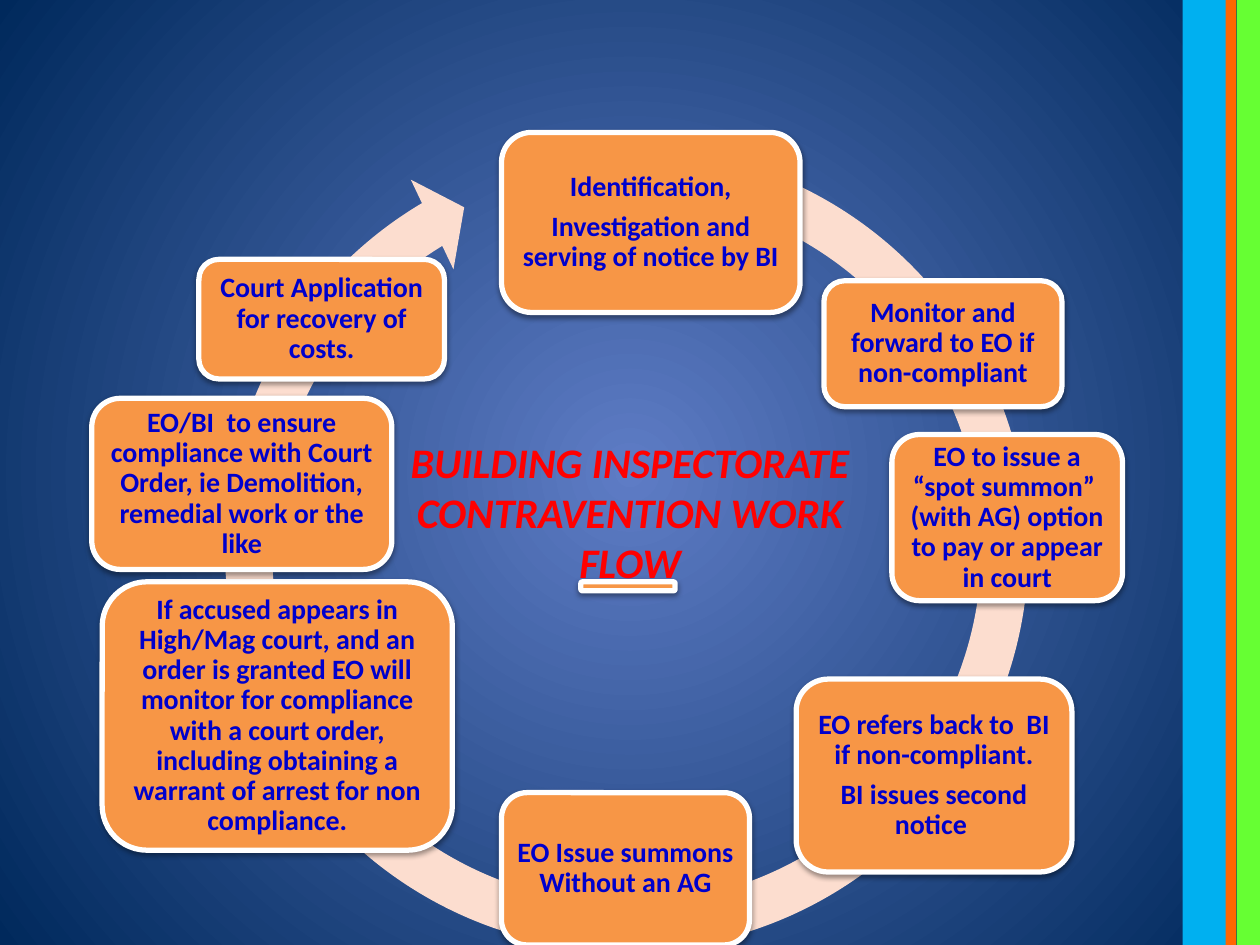
from dataclasses import dataclass

from lxml import etree
from pptx import Presentation
from pptx import util as u
from pptx.dml.color import RGBColor
from pptx.enum import shapes, text
from pptx.oxml import ns


@dataclass(frozen=True)
class Theme:
    glow: str = "5E7CC5"
    night: str = "00295C"
    sky: str = "00B0F0"
    flame: str = "FF6600"
    lime: str = "66FF33"
    ring: str = "FCDDCF"
    step: str = "F79646"
    border: str = "FFFFFF"
    step_text: str = "0000CC"
    title: str = "FF0000"
    font: str = "Calibri"
    step_size: int = 16
    title_size: int = 24


@dataclass(frozen=True)
class Area:
    """Position and size in centimetres."""
    left: float
    top: float
    width: float
    height: float

    def lengths(self) -> list:
        return [u.Cm(v) for v in (self.left, self.top, self.width, self.height)]


@dataclass(frozen=True)
class Step:
    area: Area
    lines: tuple = ()


THEME = Theme()
SLIDE_W, SLIDE_H = 25.4, 19.05

STRIPES = (
    (THEME.sky, Area(23.84, 0, 0.89, SLIDE_H)),
    (THEME.lime, Area(24.93, 0, 0.47, SLIDE_H)),
    (THEME.flame, Area(24.71, 0, 0.21, SLIDE_H)),
)
RING = Area(4.01, 2.44, 17.25, 17.25)
RING_ADJUSTMENTS = (0.055, 3.307, 143.426, 170.499, 0.058)
TITLE = Area(7.9, 8.92, 9.6, 2.79)
STEPS = (
    Step(Area(10.11, 2.67, 6.02, 3.63),
         ("Identification,", "Investigation and serving of notice by BI")),
    Step(Area(16.61, 5.66, 4.8, 2.54),
         ("Monitor and forward to EO if non-compliant",)),
    Step(Area(2.06, 11.73, 7.06, 5.41),
         ("If accused appears in High/Mag court, and an order is granted EO "
          "will monitor for compliance with a court order, including "
          "obtaining a warrant of arrest for non compliance.",)),
    Step(Area(10.11, 15.98, 5, 3.07), ("EO Issue summons Without an AG",)),
    Step(Area(16.05, 13.69, 5.56, 3.89),
         ("EO refers back to  BI if non-compliant.", "BI issues second notice ")),
    Step(Area(17.98, 8.76, 4.65, 3.35),
         ("EO to issue a “spot summon”  (with AG) option to pay or appear "
          "in court",)),
    Step(Area(4.01, 5.23, 4.95, 2.41),
         ("Court Application for recovery of costs.",)),
    Step(Area(1.85, 8.03, 6.05, 3.45),
         ("EO/BI  to ensure compliance with Court Order, ie Demolition, "
          "remedial work or the like",)),
    Step(Area(11.71, 11.73, 1.9, 0.18)),  # bar below the title
)


def apply(target, formats: dict) -> None:
    for name, value in formats.items():
        setattr(target, name, value)


def format_font(font, size: int, color: str, italic: bool = False) -> None:
    apply(font, {"name": THEME.font, "size": u.Pt(size), "bold": True,
                 "italic": italic})
    font.color.rgb = RGBColor.from_string(color)


def paint_background(slide) -> None:
    fill = slide.background.fill
    fill.gradient()
    for stop, color in zip(fill.gradient_stops, (THEME.glow, THEME.night)):
        stop.color.rgb = RGBColor.from_string(color)
    # Swap the linear direction for a circle around the slide centre
    gradient = next(slide.element.iter(ns.qn("a:gradFill")))
    gradient.remove(gradient.find(ns.qn("a:lin")))
    circle = etree.SubElement(gradient, ns.qn("a:path"), path="circle")
    etree.SubElement(circle, ns.qn("a:fillToRect"),
                     dict.fromkeys("ltrb", "50000"))


def add_plain(slide, kind, area: Area, color: str):
    shape = slide.shapes.add_shape(kind, *area.lengths())
    shape.shadow.inherit = False
    shape.fill.solid()
    shape.fill.fore_color.rgb = RGBColor.from_string(color)
    shape.line.fill.background()
    return shape


def add_shadow(shape) -> None:
    effects = shape.element.spPr.find(ns.qn("a:effectLst"))
    shadow = etree.SubElement(
        effects, ns.qn("a:outerShdw"), blurRad=str(u.Pt(3.1)),
        dist=str(u.Pt(1.6)), dir="5400000", rotWithShape="0")
    black = etree.SubElement(shadow, ns.qn("a:srgbClr"), val="000000")
    etree.SubElement(black, ns.qn("a:alpha"), val="38000")


def add_step(slide, step: Step) -> None:
    box = add_plain(slide, shapes.MSO_SHAPE.ROUNDED_RECTANGLE, step.area,
                    THEME.step)
    box.line.color.rgb = RGBColor.from_string(THEME.border)
    box.line.width = u.Pt(3)
    add_shadow(box)
    if not step.lines:
        return
    frame = box.text_frame
    sides = ("left", "top", "right", "bottom")
    apply(frame, {f"margin_{side}": u.Cm(0.17) for side in sides})
    apply(frame, {"word_wrap": True,
                  "vertical_anchor": text.MSO_ANCHOR.MIDDLE})
    frame.text = "\n".join(step.lines)
    for paragraph in frame.paragraphs:
        apply(paragraph, {"alignment": text.PP_ALIGN.CENTER,
                          "line_spacing": 0.9, "space_after": u.Pt(5.6)})
        format_font(paragraph.runs[0].font, THEME.step_size, THEME.step_text)


def place_title(slide) -> None:
    title = slide.shapes.title
    apply(title, dict(zip(("left", "top", "width", "height"), TITLE.lengths())))
    frame = title.text_frame
    apply(frame, {"text": "BUILDING INSPECTORATE CONTRAVENTION WORK FLOW",
                  "word_wrap": True, "auto_size": text.MSO_AUTO_SIZE.NONE,
                  "vertical_anchor": text.MSO_ANCHOR.MIDDLE})
    paragraph = frame.paragraphs[0]
    paragraph.alignment = text.PP_ALIGN.CENTER
    format_font(paragraph.runs[0].font, THEME.title_size, THEME.title, True)
    # The title lies in front of the work flow
    slide.shapes.element.append(title.element)


def main() -> None:
    deck = Presentation()
    apply(deck, {"slide_width": u.Cm(SLIDE_W), "slide_height": u.Cm(SLIDE_H)})
    slide = deck.slides.add_slide(deck.slide_layouts[5])
    paint_background(slide)

    # Stripes on the right edge
    for color, area in STRIPES:
        add_plain(slide, shapes.MSO_SHAPE.RECTANGLE, area, color)

    # Work flow: ring arrow, then its steps
    ring = add_plain(slide, shapes.MSO_SHAPE.CIRCULAR_ARROW, RING, THEME.ring)
    for index, value in enumerate(RING_ADJUSTMENTS):
        ring.adjustments[index] = value
    for step in STEPS:
        add_step(slide, step)

    place_title(slide)
    deck.save("out.pptx")


if __name__ == "__main__":
    main()
